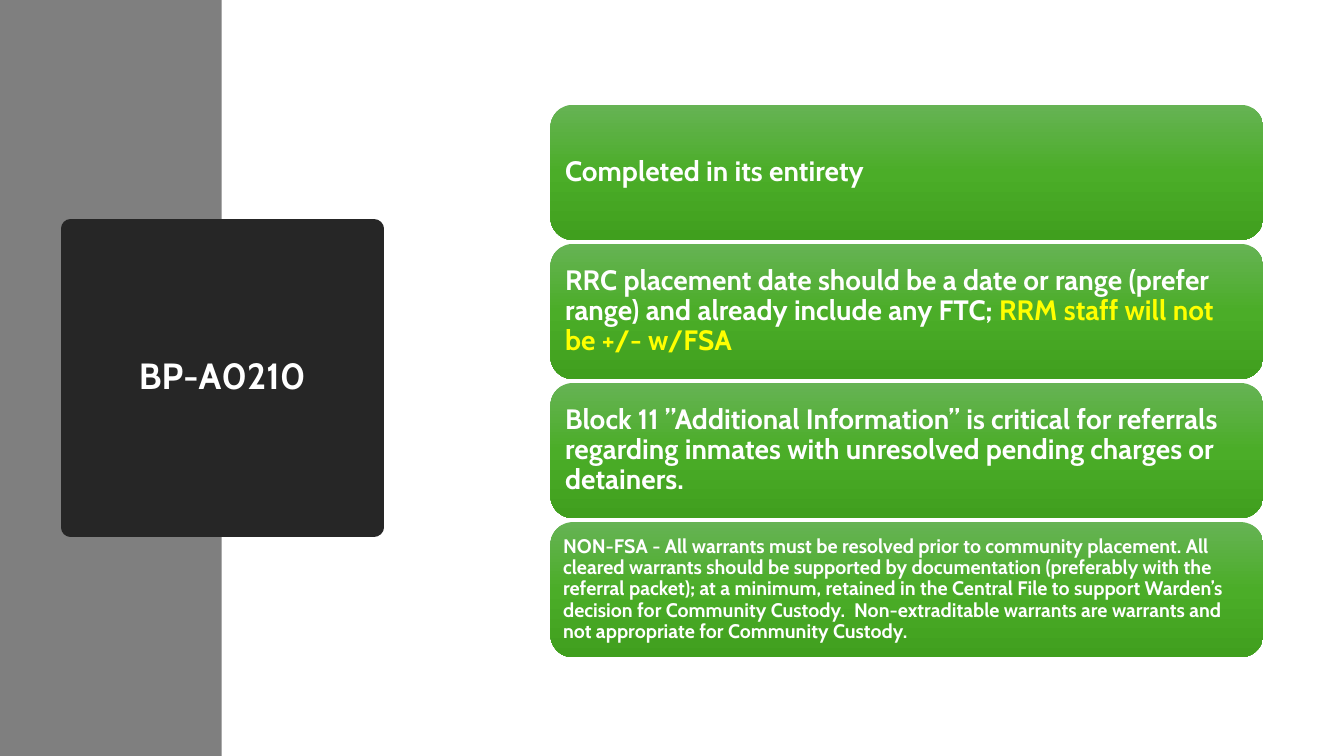
import copy

import pptx
import pptx.dml.color
import pptx.enum.dml
import pptx.enum.shapes
import pptx.enum.text
import pptx.oxml
import pptx.oxml.ns
import pptx.util
from pptx.util import Inches

WHITE, YELLOW = "FFFFFF", "FFFF00"
SIDEBAR_GREY, TITLE_BLACK = "7F7F7F", "262626"
CARD_GRADIENT = [(0, "66B354"), (0.5, "4BAD28"), (1, "409F1E")]


def color(hex_value):
    return pptx.dml.color.RGBColor.from_string(hex_value)


class SlideBuilder:
    font_name = "Cabin"
    line_spacing = 0.9

    def __init__(self, slide):
        self.slide = slide

    def style_text(self, shape, size, align):
        frame = shape.text_frame
        frame.word_wrap = True
        frame.auto_size = pptx.enum.text.MSO_AUTO_SIZE.NONE
        frame.vertical_anchor = pptx.enum.text.MSO_ANCHOR.MIDDLE
        for paragraph in frame.paragraphs:
            paragraph.alignment = align
            paragraph.line_spacing = self.line_spacing
            paragraph.font.name = self.font_name
            paragraph.font.size = pptx.util.Pt(size)
            paragraph.font.bold = True
            paragraph.font.color.rgb = color(WHITE)

    def shape(self, kind, left, top, width, height):
        shape = self.slide.shapes.add_shape(
            kind, Inches(left), Inches(top), Inches(width), Inches(height))
        shape.shadow.inherit = False
        shape.line.fill.background()
        return shape

    def sidebar(self, width, height):
        band = self.shape(pptx.enum.shapes.MSO_SHAPE.RECTANGLE, 0, 0, width, height)
        band.fill.solid()
        band.fill.fore_color.rgb = color(SIDEBAR_GREY)

    def title(self, text, left, top, width, height):
        title = self.slide.shapes.title
        title.left, title.top = Inches(left), Inches(top)
        title.width, title.height = Inches(width), Inches(height)
        title.fill.solid()
        title.fill.fore_color.rgb = color(TITLE_BLACK)
        title.line.color.rgb = color(TITLE_BLACK)
        title.line.width = pptx.util.Pt(13.75)
        # Round joins soften the corners of the thick outline
        outline = title.element.spPr.find(pptx.oxml.ns.qn("a:ln"))
        outline.append(pptx.oxml.parse_xml(
            f'<a:round {pptx.oxml.ns.nsdecls("a")}/>'))
        title.text_frame.text = text
        self.style_text(title, 26, pptx.enum.text.PP_ALIGN.CENTER)
        # Bring the title in front of the sidebar
        title.element.getparent().append(title.element)

    def gradient(self, shape, stops):
        shape.fill.gradient()
        shape.fill.gradient_angle = 270
        stop_list = next(shape.element.spPr.iter(pptx.oxml.ns.qn("a:gsLst")))
        while len(stop_list) < len(stops):
            stop_list.append(copy.deepcopy(stop_list[0]))
        for stop, (position, hex_value) in zip(shape.fill.gradient_stops, stops):
            stop.position = position
            stop.color.rgb = color(hex_value)

    def card(self, top, runs, size, inset):
        card = self.shape(pptx.enum.shapes.MSO_SHAPE.ROUNDED_RECTANGLE,
                          5.46, top, 7.07, 1.34)
        self.gradient(card, CARD_GRADIENT)
        frame = card.text_frame
        frame.margin_left = frame.margin_right = Inches(inset)
        frame.margin_top = frame.margin_bottom = Inches(inset)
        for text, hex_value in runs:
            run = frame.paragraphs[0].add_run()
            run.text = text
            if hex_value != WHITE:
                run.font.color.rgb = color(hex_value)
        self.style_text(card, size, pptx.enum.text.PP_ALIGN.LEFT)


REQUIREMENTS = [
    ([("Completed in its entirety", WHITE)], 20, 0.08),
    ([("RRC placement date should be a date or range (prefer range) and "
       "already include any FTC; ", WHITE),
      ("RRM staff will not be +/- w/FSA", YELLOW)], 20, 0.08),
    ([("Block 11 ”Additional Information” is critical for referrals regarding "
       "inmates with unresolved pending charges or detainers.", WHITE)], 20, 0.08),
    ([("NON-FSA - All warrants must be resolved prior to community placement. "
       "All cleared warrants should be supported by documentation (preferably "
       "with the referral packet); at a minimum, retained in the Central File "
       "to support Warden’s decision for Community Custody.  Non-extraditable "
       "warrants are warrants and not appropriate for Community Custody.",
       WHITE)], 14, 0.06),
]


def main():
    deck = pptx.Presentation()
    deck.slide_width, deck.slide_height = Inches(13.33), Inches(7.5)
    title_only = deck.slide_layouts[5]
    builder = SlideBuilder(deck.slides.add_slide(title_only))

    # Sidebar and title block
    builder.sidebar(2.2, 7.5)
    builder.title("BP-A0210", 0.7, 2.27, 3.01, 2.96)

    # Requirement cards
    for row, (runs, size, inset) in enumerate(REQUIREMENTS):
        builder.card(1.04 + row * 1.38, runs, size, inset)

    deck.save("out.pptx")


if __name__ == "__main__":
    main()
